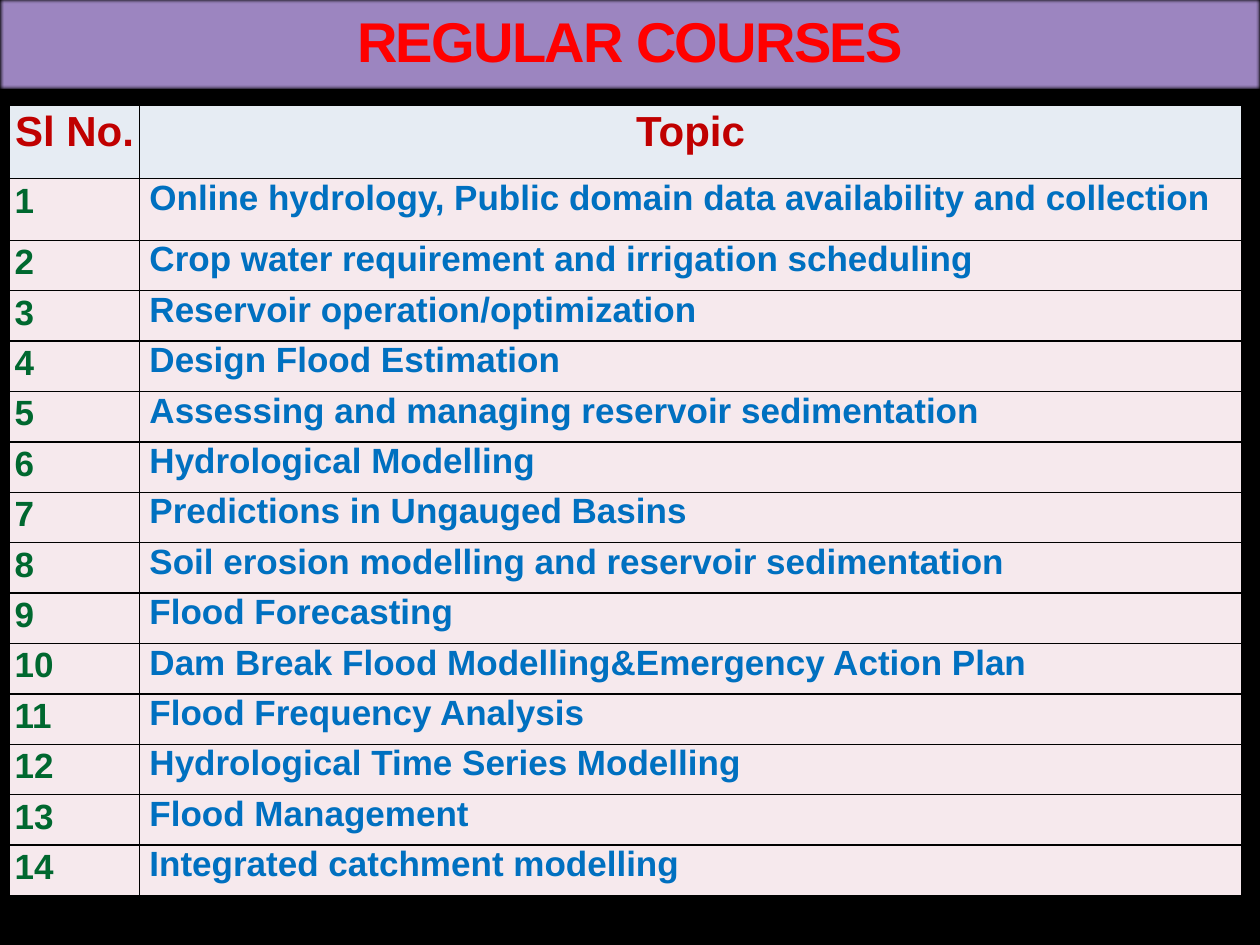
from lxml import etree
from pptx import Presentation
from pptx import util as u
from pptx.dml.color import RGBColor
from pptx.enum import text
from pptx.oxml import ns

WIDTH, HEIGHT = u.Inches(10), u.Inches(7.5)
TABLE_LEFT, TABLE_TOP = u.Pt(5.5), u.Pt(60.3)
COLUMNS = [1.03, 8.75]
HEADER_HEIGHT, FIRST_HEIGHT, ROW_HEIGHT = 0.58, 0.49, 0.4
TOPICS = [
    "Online hydrology, Public domain data availability and collection",
    "Crop water requirement and irrigation scheduling",
    "Reservoir operation/optimization",
    "Design Flood Estimation",
    "Assessing and managing reservoir sedimentation",
    "Hydrological Modelling",
    "Predictions in Ungauged Basins",
    "Soil erosion modelling and reservoir sedimentation",
    "Flood Forecasting",
    "Dam Break Flood Modelling&Emergency Action Plan",
    "Flood Frequency Analysis",
    "Hydrological Time Series Modelling",
    "Flood Management",
    "Integrated catchment modelling",
]


def paint(fill, color):
    fill.solid()
    fill.fore_color.rgb = RGBColor.from_string(color)


def add_child(parent, tag, **attributes):
    return etree.SubElement(parent, ns.qn(tag), attributes)


def style_paragraph(para, size, color, align, spacing=None):
    para.alignment = align
    para.line_spacing = spacing
    para.font.name = "Arial"
    para.font.size = u.Pt(size)
    para.font.bold = True
    para.font.color.rgb = RGBColor.from_string(color)


def add_borders(cell):
    properties = cell._tc.get_or_add_tcPr()
    for index, side in enumerate(["a:lnL", "a:lnR", "a:lnT", "a:lnB"]):
        line = etree.Element(ns.qn(side), w=str(u.Pt(1)))
        add_child(add_child(line, "a:solidFill"), "a:srgbClr", val="000000")
        properties.insert(index, line)


def fill_cell(cell, words, background, size, color, align, spacing=None, indent=0):
    cell.margin_left = cell.margin_right = u.Inches(0.04)
    cell.margin_top = cell.margin_bottom = 0
    paint(cell.fill, background)
    add_borders(cell)
    cell.text = words
    para = cell.text_frame.paragraphs[0]
    if indent:
        para._p.get_or_add_pPr().set("marL", str(u.Inches(indent)))
    style_paragraph(para, size, color, align, spacing)


def add_title(page, words):
    box = page.shapes.title
    box.left, box.top, box.width, box.height = 0, 0, WIDTH, u.Inches(0.7)
    paint(box.fill, "9C85C0")
    effects = add_child(box._element.spPr, "a:effectLst")
    shadow = add_child(effects, "a:outerShdw", blurRad=str(u.Pt(7.5)), dist="0")
    add_child(add_child(shadow, "a:srgbClr", val="000000"), "a:alpha", val="50000")
    add_child(effects, "a:softEdge", rad=str(u.Pt(1)))
    frame = box.text_frame
    frame.text = words
    frame.auto_size = text.MSO_AUTO_SIZE.NONE
    frame.vertical_anchor = text.MSO_ANCHOR.MIDDLE
    para = frame.paragraphs[0]
    style_paragraph(para, 32, "FF0000", text.PP_ALIGN.CENTER, 0.9)
    para.runs[0]._r.get_or_add_rPr().set("spc", "-100")


def add_course_table(page):
    heights = [HEADER_HEIGHT, FIRST_HEIGHT] + [ROW_HEIGHT] * (len(TOPICS) - 1)
    table = page.shapes.add_table(
        len(heights), len(COLUMNS), TABLE_LEFT, TABLE_TOP,
        u.Inches(sum(COLUMNS)), u.Inches(sum(heights))).table
    for column, width in zip(table.columns, COLUMNS):
        column.width = u.Inches(width)
    for row, height in zip(table.rows, heights):
        row.height = u.Inches(height)
    for column, heading in enumerate(["Sl No.", "Topic"]):
        fill_cell(table.cell(0, column), heading, "E6ECF3", 24, "C00000",
                  text.PP_ALIGN.CENTER, 1.07)
    for number, topic in enumerate(TOPICS, 1):
        fill_cell(table.cell(number, 0), str(number), "F6E9ED", 20, "00682F",
                  text.PP_ALIGN.JUSTIFY, 1.07)
        fill_cell(table.cell(number, 1), topic, "F6E9ED", 20, "0070C0",
                  text.PP_ALIGN.LEFT, indent=0.04)


def main():
    deck = Presentation()
    deck.slide_width, deck.slide_height = WIDTH, HEIGHT
    page = deck.slides.add_slide(deck.slide_layouts.get_by_name("Title Only"))
    paint(page.background.fill, "000000")
    add_title(page, "REGULAR COURSES")
    add_course_table(page)
    deck.save("out.pptx")


if __name__ == "__main__":
    main()
